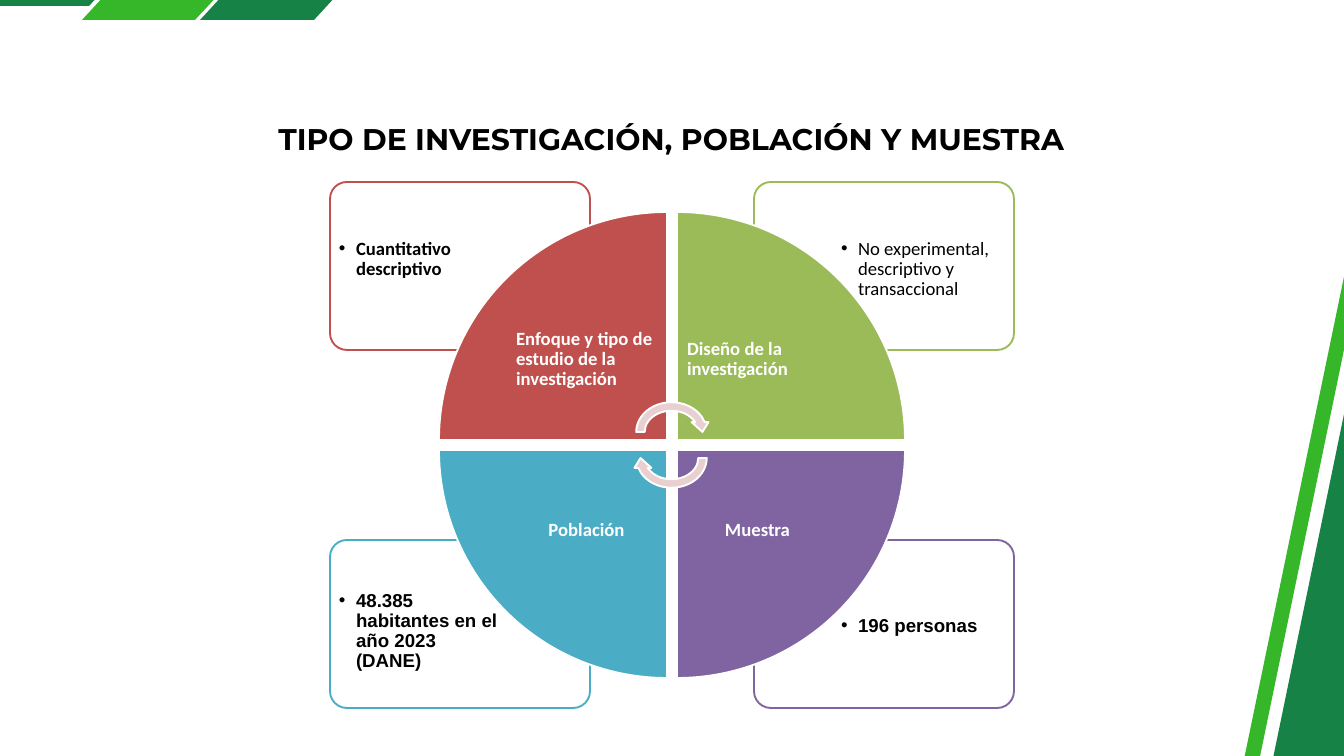
from lxml import etree
from pptx import Presentation
from pptx.dml.color import RGBColor
from pptx.enum.shapes import MSO_SHAPE
from pptx.enum.text import MSO_ANCHOR, PP_ALIGN
from pptx.oxml.ns import qn
from pptx.util import Emu, Pt

LEFT, CENTER = PP_ALIGN.LEFT, PP_ALIGN.CENTER
TOP, MIDDLE = MSO_ANCHOR.TOP, MSO_ANCHOR.MIDDLE
ROUNDED, WEDGE, ARROW = (
    MSO_SHAPE.ROUNDED_RECTANGLE, MSO_SHAPE.PIE_WEDGE, MSO_SHAPE.CIRCULAR_ARROW)

COLORS = {
    "black": "000000", "white": "FFFFFF", "dark": "168246", "light": "35B729",
    "red": "C0504D", "lime": "9BBB59", "violet": "8064A2", "blue": "4BACC6",
    "pink": "E8D0D0",
}
SCALE = 914400 / 67.2  # EMU in one px

TITLE = "TIPO DE INVESTIGACIÓN, POBLACIÓN Y MUESTRA"
# Slanted bands that bleed over the slide edges
BANDS = [
    ("dark", [(-120, -56), (146, -56), (89, 6), (-177, 6)]),
    ("light", [(164, -69), (278, -69), (195, 20), (82, 20)]),
    ("dark", [(282, -69), (396, -69), (314, 20), (200, 20)]),
    ("dark", [(1218, 1025), (1441, -56), (1748, 8), (1525, 1088)]),
    ("light", [(1189, 1025), (1413, -56), (1427, -52), (1204, 1028)]),
]
# Clockwise from the top left; "top" is where the detail text starts
QUADRANTS = [
    dict(column=0, row=0, color="red", align=LEFT,
         caption="Enfoque y tipo de estudio de la investigación",
         detail="Cuantitativo descriptivo", font="Calibri", bold=True, top=234),
    dict(column=1, row=0, color="lime", align=LEFT,
         caption="Diseño de la investigación",
         detail="No experimental, descriptivo y transaccional",
         font="Calibri", bold=False, top=234),
    dict(column=1, row=1, color="violet", align=CENTER, caption="Muestra",
         detail="196 personas", font="Arial", bold=True, top=611),
    dict(column=0, row=1, color="blue", align=CENTER, caption="Población",
         detail="48.385 habitantes en el año 2023 (DANE)",
         font="Arial", bold=True, top=586),
]
# Left and top positions, by column and by row
CARD_X, CARD_Y, CARD_SIZE = (330, 754), (182, 540), (260, 168)
DETAIL_X, DETAIL_BOTTOM, DETAIL_WIDTH = (334, 836), (304, 704), 175
WEDGE_X, WEDGE_Y, WEDGE_SIDE = (439, 677), (212, 450), 228
CAPTION_X, CAPTION_Y, CAPTION_SIDE = (506, 677), (279, 450), 161
ARROWS = [(398, 0), (424, 180)]  # top, rotation


def px(value):
    return Emu(round(value * SCALE))


def rgb(name):
    return RGBColor.from_string(COLORS[name])


def paint(shape, fill, line=None):
    shape.shadow.inherit = False
    shape.fill.solid()
    shape.fill.fore_color.rgb = rgb(fill)
    if line:
        shape.line.color.rgb = rgb(line)
        shape.line.width = Pt(2)
    else:
        shape.line.fill.background()


def add_figure(page, kind, left, top, width, height, fill, line, rotation=0):
    shape = page.shapes.add_shape(kind, px(left), px(top), px(width), px(height))
    paint(shape, fill, line)
    shape.rotation = rotation
    return shape


def add_text(page, text, left, top, width, height, *, font="Calibri", size=20,
             color="black", bold=True, align=LEFT, anchor=TOP, inset=0,
             spacing=0.9, bullet=False):
    box = page.shapes.add_textbox(px(left), px(top), px(width), px(height))
    frame = box.text_frame
    frame.word_wrap = True
    frame.vertical_anchor = anchor
    frame.margin_left = frame.margin_right = px(inset)
    frame.margin_top = frame.margin_bottom = px(inset)
    para = frame.paragraphs[0]
    para.alignment = align
    para.line_spacing = spacing
    if bullet:
        properties = para._p.get_or_add_pPr()
        properties.set("marL", str(px(17)))
        properties.set("indent", str(px(-17)))
        etree.SubElement(properties, qn("a:buFont")).set("typeface", "Arial")
        etree.SubElement(properties, qn("a:buChar")).set("char", "•")
    span = para.add_run()
    span.text = text
    span.font.name, span.font.size, span.font.bold = font, Pt(size), bold
    span.font.color.rgb = rgb(color)


def main():
    deck = Presentation()
    deck.slide_width, deck.slide_height = px(1344), px(756)
    page = deck.slides.add_slide(deck.slide_layouts[6])

    # Green bands at the corners
    for color, points in BANDS:
        outline = page.shapes.build_freeform(*points[0], scale=SCALE)
        outline.add_line_segments(points[1:], close=True)
        paint(outline.convert_to_shape(), color)

    add_text(page, TITLE, 210, 121, 923, 36, font="Montserrat", size=32,
             align=CENTER, spacing=1.0)

    # Cards with details, behind the wheel
    for part in QUADRANTS:
        column, row, top = part["column"], part["row"], part["top"]
        card = add_figure(page, ROUNDED, CARD_X[column], CARD_Y[row], *CARD_SIZE,
                          "white", part["color"])
        card.adjustments[0] = 0.1
        add_text(page, part["detail"], DETAIL_X[column], top, DETAIL_WIDTH,
                 DETAIL_BOTTOM[row] - top, font=part["font"], bold=part["bold"],
                 inset=5, bullet=True)

    # Wheel of four wedges
    for index, part in enumerate(QUADRANTS):
        column, row = part["column"], part["row"]
        add_figure(page, WEDGE, WEDGE_X[column], WEDGE_Y[row], WEDGE_SIDE,
                   WEDGE_SIDE, part["color"], "white", rotation=90 * index)
        add_text(page, part["caption"], CAPTION_X[column], CAPTION_Y[row],
                 CAPTION_SIDE, CAPTION_SIDE, color="white", align=part["align"],
                 anchor=MIDDLE, inset=10)

    # Cycle arrows at the centre
    for top, rotation in ARROWS:
        add_figure(page, ARROW, 632, top, 79, 68, "pink", "white", rotation)

    deck.save("out.pptx")


if __name__ == "__main__":
    main()
